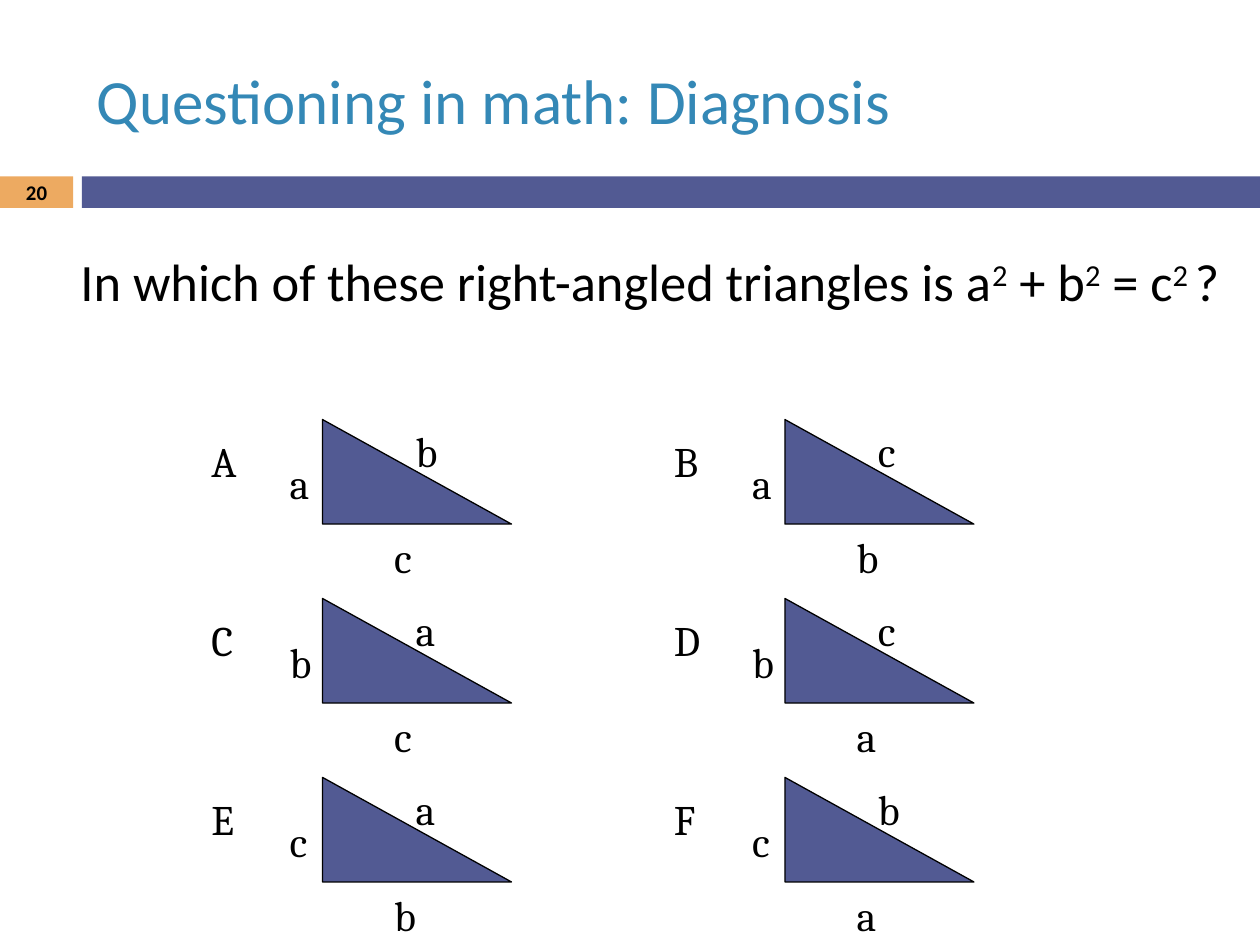
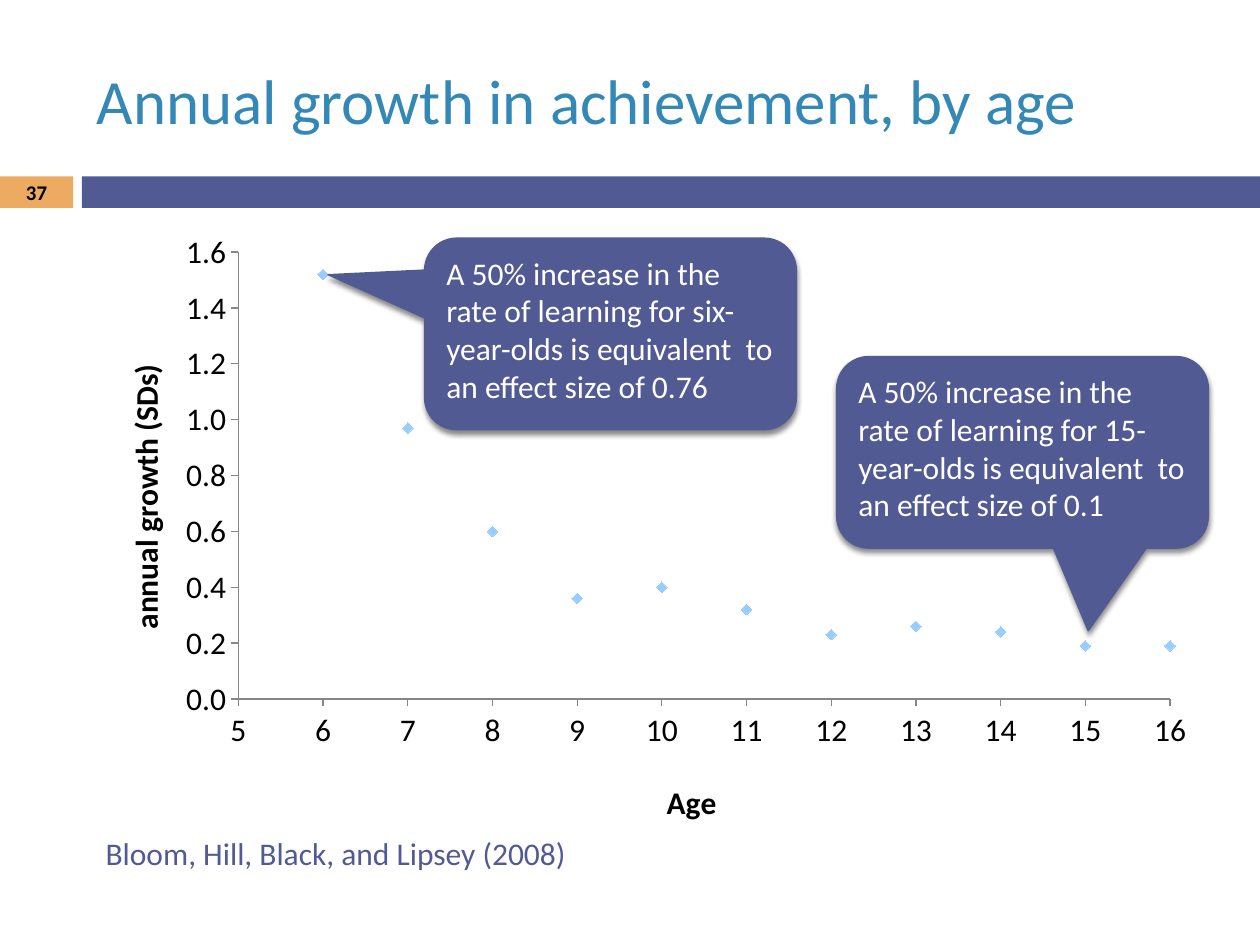
from dataclasses import dataclass
from itertools import product

from lxml import etree
from pptx import Presentation
from pptx.chart.data import XyChartData
from pptx.dml.color import RGBColor
from pptx.enum.chart import XL_CHART_TYPE, XL_MARKER_STYLE, XL_TICK_MARK
from pptx.enum.shapes import MSO_SHAPE
from pptx.enum.text import MSO_ANCHOR, PP_ALIGN
from pptx.oxml.ns import qn
from pptx.util import Inches, Pt

RECTANGLE = MSO_SHAPE.RECTANGLE
RIGHT_TRIANGLE = MSO_SHAPE.RIGHT_TRIANGLE
CALLOUT = MSO_SHAPE.ROUNDED_RECTANGULAR_CALLOUT
SCATTER = XL_CHART_TYPE.XY_SCATTER
DIAMOND = XL_MARKER_STYLE.DIAMOND
TICK_OUTSIDE = XL_TICK_MARK.OUTSIDE
TOP, MIDDLE = MSO_ANCHOR.TOP, MSO_ANCHOR.MIDDLE
LEFT, CENTER = PP_ALIGN.LEFT, PP_ALIGN.CENTER


@dataclass(frozen=True)
class Theme:
    band: RGBColor = RGBColor(0x52, 0x5A, 0x93)
    number_box: RGBColor = RGBColor(0xED, 0xAA, 0x61)
    title: RGBColor = RGBColor(0x34, 0x88, 0xB6)
    text: RGBColor = RGBColor(0, 0, 0)
    light_text: RGBColor = RGBColor(0xFF, 0xFF, 0xFF)
    marker: RGBColor = RGBColor(0x99, 0xCC, 0xFF)
    axis: RGBColor = RGBColor(0x86, 0x86, 0x86)
    font: str = "Calibri"
    label_font: str = "Cambria"
    title_size: float = 36
    question_size: float = 30
    label_size: float = 24
    body_size: float = 18
    number_size: float = 11.9


THEME = Theme()


def format_font(font, size, color, name=THEME.font, bold=False):
    font.size = Pt(size)
    font.color.rgb = color
    font.name = name
    font.bold = bold


def write_text(frame, text, size=THEME.body_size, color=THEME.text, font=THEME.font,
               bold=False, align=LEFT, anchor=TOP, wrap=True):
    """Fill a text frame; parts between ^ marks are raised as superscripts."""
    frame.word_wrap = wrap
    frame.vertical_anchor = anchor
    paragraph = frame.paragraphs[0]
    paragraph.alignment = align
    for index, part in enumerate(text.split("^")):
        run = paragraph.add_run()
        run.text = part
        format_font(run.font, size, color, font, bold)
        if index % 2:
            run.font._element.set("baseline", "30000")


def place_chart_part(element, position, **values):
    """Set a manual layout, in fractions of the chart, on a plot area or title."""
    layout = element.find(qn("c:layout"))
    if layout is None:
        layout = etree.Element(qn("c:layout"))
        element.insert(position, layout)
    manual = etree.SubElement(layout, qn("c:manualLayout"))
    if "w" in values:
        etree.SubElement(manual, qn("c:layoutTarget")).set("val", "inner")
    for mode in ("xMode", "yMode"):
        etree.SubElement(manual, qn(f"c:{mode}")).set("val", "edge")
    for name, value in values.items():
        etree.SubElement(manual, qn(f"c:{name}")).set("val", str(value))


class Deck:
    def __init__(self, theme):
        self.theme = theme
        self.presentation = Presentation()
        self.presentation.slide_width = Inches(10)
        self.presentation.slide_height = Inches(7.5)
        self.slide = None

    def new_slide(self, title, number):
        theme = self.theme
        self.slide = self.presentation.slides.add_slide(self.presentation.slide_layouts[6])
        self.shape(RECTANGLE, 0, 1.4, 0.58, 0.25, theme.number_box)
        self.shape(RECTANGLE, 0.65, 1.4, 9.35, 0.25, theme.band)
        self.text(title, 0.67, 0.25, 8.92, 1.08, size=theme.title_size,
                  color=theme.title, anchor=MIDDLE)
        self.text(str(number), 0, 1.39, 0.58, 0.27, size=theme.number_size,
                  bold=True, align=CENTER, anchor=MIDDLE)

    def text(self, text, left, top, width, height, group=None, **text_format):
        box = (group or self.slide).shapes.add_textbox(
            Inches(left), Inches(top), Inches(width), Inches(height))
        write_text(box.text_frame, text, **text_format)

    def shape(self, kind, left, top, width, height, fill, line=None, line_width=0.75, group=None):
        shape = (group or self.slide).shapes.add_shape(
            kind, Inches(left), Inches(top), Inches(width), Inches(height))
        shape.shadow.inherit = False
        shape.fill.solid()
        shape.fill.fore_color.rgb = fill
        if line is None:
            shape.line.fill.background()
        else:
            shape.line.color.rgb = line
            shape.line.width = Pt(line_width)
        return shape

    def triangle(self, left, top, name, upright, base, hypotenuse):
        """Draw a named right-angled triangle with a letter on each side."""
        theme = self.theme
        group = self.slide.shapes.add_group_shape()
        self.shape(RIGHT_TRIANGLE, left, top, 1.5, 0.83, theme.band, theme.text, group=group)
        labels = (
            (name, -0.98, 0.08, 0.48, True),
            (upright, -0.36, 0.25, 0.58, True),
            (base, 0.47, 0.84, 0.36, False),
            (hypotenuse, 0.64, 0, 0.36, False),
        )
        for letter, right, down, width, wrap in labels:
            self.text(letter, left + right, top + down, width, 0.5, group=group,
                      size=theme.label_size, font=theme.label_font, wrap=wrap)

    def callout(self, text, left, top, pointer):
        theme = self.theme
        shape = self.shape(CALLOUT, left, top, 2.95, 1.52, theme.band, theme.band, 0.79)
        for index, value in enumerate((*pointer, 0.167)):
            shape.adjustments[index] = value
        effects = shape._element.spPr.find(qn("a:effectLst"))
        shadow = etree.SubElement(effects, qn("a:outerShdw"), blurRad=str(Pt(3)),
                                  dist=str(Pt(2.4)), dir="5400000", rotWithShape="0")
        color = etree.SubElement(shadow, qn("a:srgbClr"), val=str(theme.text))
        etree.SubElement(color, qn("a:alpha"), val="45000")
        write_text(shape.text_frame, text, color=theme.light_text)

    def axis(self, axis, title, low, high, step, number_format, title_place):
        theme = self.theme
        axis.minimum_scale, axis.maximum_scale, axis.major_unit = low, high, step
        axis.has_major_gridlines = False
        axis.major_tick_mark = TICK_OUTSIDE
        axis.format.line.color.rgb = theme.axis
        axis.tick_labels.number_format = number_format
        axis.tick_labels.number_format_is_linked = False
        format_font(axis.tick_labels.font, theme.body_size, theme.text)
        write_text(axis.axis_title.text_frame, title, bold=True, align=CENTER)
        x, y = title_place
        place_chart_part(axis._element.find(qn("c:title")), 1, x=x, y=y)

    def scatter(self, points, left, top, width, height):
        theme = self.theme
        data = XyChartData()
        data_series = data.add_series("Series 1")
        for x, y in points:
            data_series.add_data_point(x, y)
        chart = self.slide.shapes.add_chart(
            SCATTER, Inches(left), Inches(top), Inches(width), Inches(height), data).chart
        chart.has_title = chart.has_legend = False
        format_font(chart.font, theme.body_size, theme.text)
        plot = chart.plots[0]
        plot.vary_by_categories = False
        series = plot.series[0]
        series.format.line.fill.background()
        series.marker.style = DIAMOND
        series.marker.size = 6
        series.marker.format.fill.solid()
        series.marker.format.fill.fore_color.rgb = theme.marker
        series.marker.format.line.fill.background()
        plot_area = chart._chartSpace.chart.plotArea
        place_chart_part(plot_area, 0, x=0.137, y=0.051, w=0.829, h=0.721)
        return chart


def build_triangles_slide(deck):
    deck.new_slide("Questioning in math: Diagnosis", 20)
    deck.text("In which of these right-angled triangles is a^2^ + b^2^ = c^2 ^?",
              0.54, 1.93, 9.46, 0.61, size=THEME.question_size)
    # Letters on the upright, the base and the hypotenuse, row by row
    sides = ("acb", "abc", "bca", "bac", "cba", "cab")
    for name, (row, column), letters in zip("ABCDEF", product(range(3), range(2)), sides):
        deck.triangle(2.56 + 3.67 * column, 3.33 + 1.42 * row, name, *letters)


def build_growth_slide(deck):
    deck.new_slide("Annual growth in achievement, by age", 37)
    deck.text("Bloom, Hill, Black, and Lipsey (2008)", 0.74, 6.57, 6.83, 0.4, color=THEME.band)
    growth = (1.52, 0.97, 0.6, 0.36, 0.4, 0.32, 0.23, 0.26, 0.24, 0.19, 0.19)
    chart = deck.scatter(enumerate(growth, start=6), 0.67, 1.75, 8.92, 4.92)
    deck.axis(chart.category_axis, "Age", 5, 16, 1, "General", (0.513, 0.895))
    deck.axis(chart.value_axis, "annual growth (SDs)", 0, 1.6, 0.2, "#,##0.0", (0.03, 0.223))
    title_body = chart.value_axis.axis_title.text_frame._txBody.bodyPr
    title_body.set("rot", "-5400000")
    title_body.set("vert", "horz")
    callouts = (
        ("six", "0.76", 3.37, 1.89, (-0.76, -0.309)),
        ("15", "0.1", 6.64, 2.83, (0.177, 0.932)),
    )
    for age, effect, left, top, pointer in callouts:
        deck.callout(f"A 50% increase in the rate of learning for {age}-year-olds "
                     f"is equivalent  to an effect size of {effect}", left, top, pointer)


def main():
    deck = Deck(THEME)
    build_triangles_slide(deck)
    build_growth_slide(deck)
    deck.presentation.save("out.pptx")


if __name__ == "__main__":
    main()
